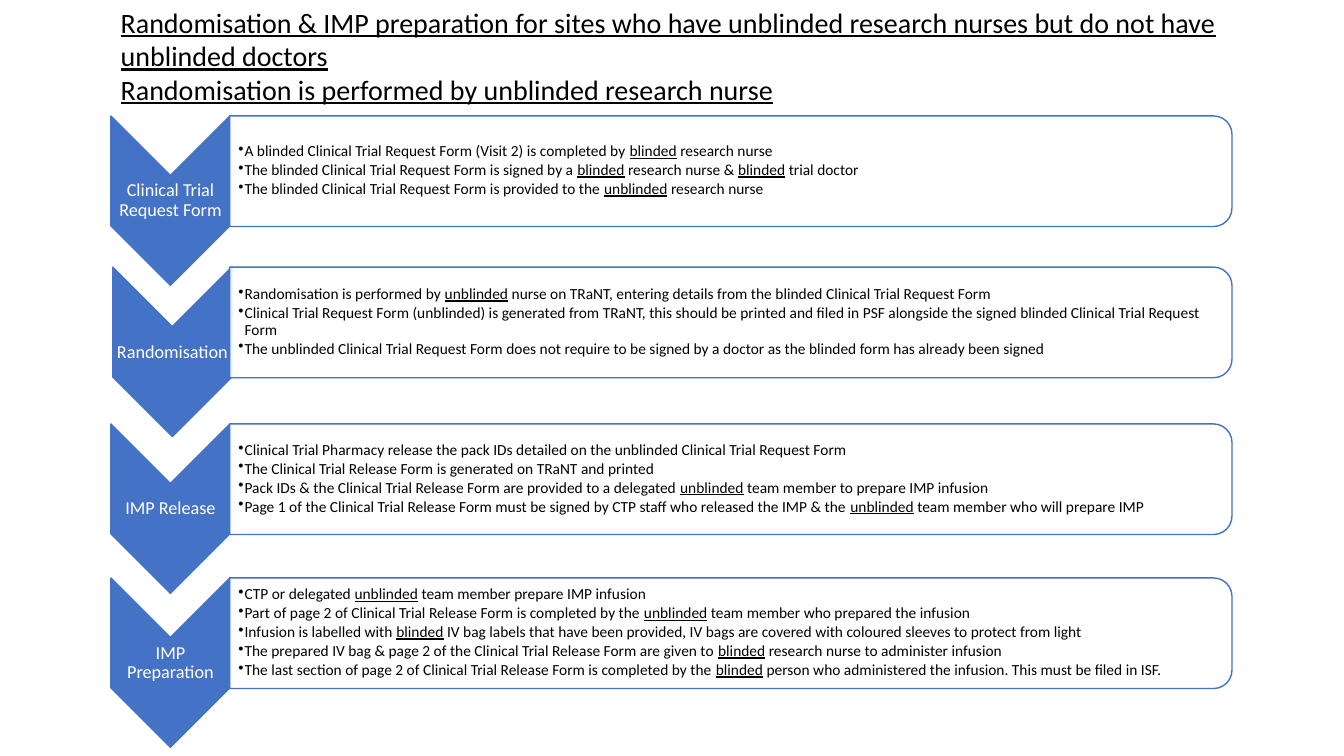
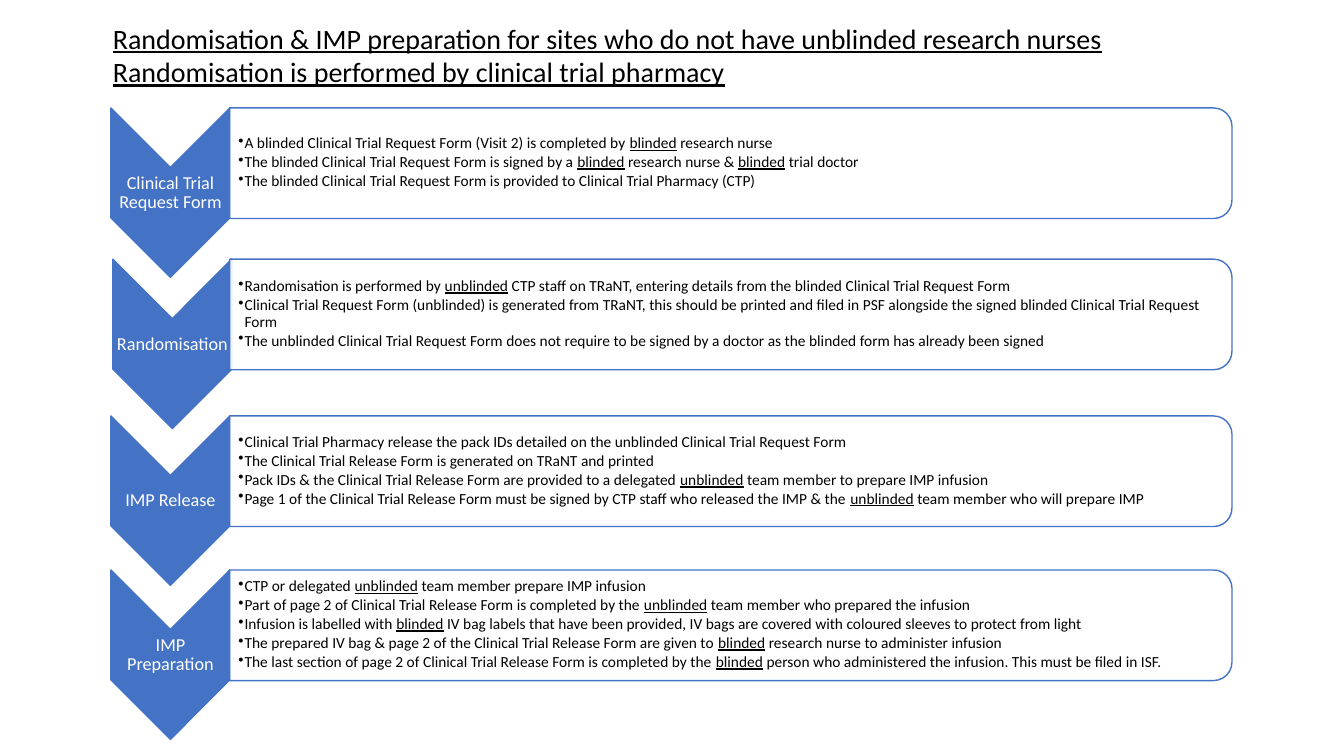
from pptx import Presentation
from pptx.dml.color import RGBColor
from pptx.enum.shapes import MSO_SHAPE
from pptx.enum.text import MSO_ANCHOR, MSO_AUTO_SIZE, PP_ALIGN
from pptx.oxml.xmlchemy import OxmlElement
from pptx.util import Pt

CHEVRON, CARD = MSO_SHAPE.CHEVRON, MSO_SHAPE.ROUND_2_SAME_RECTANGLE
TOP, MIDDLE = MSO_ANCHOR.TOP, MSO_ANCHOR.MIDDLE
LEFT, CENTER = PP_ALIGN.LEFT, PP_ALIGN.CENTER
NO_AUTOFIT = MSO_AUTO_SIZE.NONE

BLUE = RGBColor(0x44, 0x72, 0xC4)
WHITE = RGBColor(0xFF, 0xFF, 0xFF)
BLACK = RGBColor(0x00, 0x00, 0x00)
FONT = "Calibri"

CHEVRON_W, CHEVRON_H = 85, 121
CARD_X, CARD_W, CARD_H = 164, 716, 79

SLIDES = [
    {
        "title": [
            "Randomisation & IMP preparation for sites who have unblinded research nurses but do not have",
            "unblinded doctors",
            "Randomisation is performed by unblinded research nurse",
        ],
        "title_box": (79, 0, 820, 80),
        "top": 82.8,
        "recipient": "the _unblinded_ research nurse",
        "randomiser": "nurse",
    },
    {
        "title": [
            "Randomisation & IMP preparation for sites who do not have unblinded research nurses",
            "Randomisation is performed by clinical trial pharmacy",
        ],
        "title_box": (73.4, 11.5, 740, 55.5),
        "top": 77.1,
        "recipient": "Clinical Trial Pharmacy (CTP)",
        "randomiser": "CTP staff",
    },
]

STEPS = [
    (79.2, 0, "Clinical Trial Request Form", [
        "A blinded Clinical Trial Request Form (Visit 2) is completed by _blinded_ research nurse",
        "The blinded Clinical Trial Request Form is signed by a _blinded_ research nurse & _blinded_ trial doctor",
        "The blinded Clinical Trial Request Form is provided to {recipient}",
    ]),
    (80.6, 108, "Randomisation", [
        "Randomisation is performed by _unblinded_ {randomiser} on TRaNT, entering details from the blinded Clinical Trial Request Form",
        "Clinical Trial Request Form (unblinded) is generated from TRaNT, this should be printed and filed in PSF alongside the signed blinded Clinical Trial Request Form",
        "The unblinded Clinical Trial Request Form does not require to be signed by a doctor as the blinded form has already been signed",
    ]),
    (79.2, 220, "IMP Release", [
        "Clinical Trial Pharmacy release the pack IDs detailed on the unblinded Clinical Trial Request Form",
        "The Clinical Trial Release Form is generated on TRaNT and printed",
        "Pack IDs & the Clinical Trial Release Form are provided to a delegated _unblinded_ team member to prepare IMP infusion",
        "Page 1 of the Clinical Trial Release Form must be signed by CTP staff who released the IMP & the _unblinded_ team member who will prepare IMP",
    ]),
    (79.2, 330, "IMP Preparation", [
        "CTP or delegated _unblinded_ team member prepare IMP infusion",
        "Part of page 2 of Clinical Trial Release Form is completed by the _unblinded_ team member who prepared the infusion",
        "Infusion is labelled with _blinded_ IV bag labels that have been provided, IV bags are covered with coloured sleeves to protect from light",
        "The prepared IV bag & page 2 of the Clinical Trial Release Form are given to _blinded_ research nurse to administer infusion",
        "The last section of page 2 of Clinical Trial Release Form is completed by the _blinded_ person who administered the infusion. This must be filed in ISF.",
    ]),
]


def write(sp, lines, size, color=BLACK, align=LEFT, anchor=MIDDLE, inset=(0.7, 0.7),
          spacing=0.9, after=0, bullet=False, underline=False):
    tf = sp.text_frame
    tf.word_wrap = True
    tf.auto_size = NO_AUTOFIT
    tf.vertical_anchor = anchor
    tf.margin_left, tf.margin_top = Pt(inset[0]), Pt(inset[1])
    tf.margin_right = tf.margin_bottom = Pt(0.7)
    for i, line in enumerate(lines):
        p = tf.add_paragraph() if i else tf.paragraphs[0]
        p.alignment = align
        p.line_spacing = spacing
        p.space_before = Pt(0)
        p.space_after = Pt(after)
        if bullet:
            p.level = 1
            pPr = p._p.get_or_add_pPr()
            pPr.set("marL", str(Pt(4.5)))
            pPr.set("indent", str(-Pt(4.5)))
            bu = OxmlElement("a:buChar")
            bu.set("char", "•")
            pPr.append(bu)
        for j, part in enumerate(line.split("_")):
            r = p.add_run()
            r.text = part
            r.font.name = FONT
            r.font.size = Pt(size)
            r.font.color.rgb = color
            r.font.underline = underline or j % 2 == 1


def add_rotated(s, kind, x, y, w, h, fill):
    sp = s.shapes.add_shape(kind, Pt(x + (w - h) / 2), Pt(y + (h - w) / 2), Pt(h), Pt(w))
    sp.rotation = 90
    sp.shadow.inherit = False
    sp.fill.solid()
    sp.fill.fore_color.rgb = fill
    sp.line.color.rgb = BLUE
    sp.line.width = Pt(1)
    return sp


prs = Presentation()
prs.slide_width, prs.slide_height = Pt(960), Pt(540)

for page in SLIDES:
    s = prs.slides.add_slide(prs.slide_layouts[5])
    title = s.shapes.title
    title.left, title.top, title.width, title.height = map(Pt, page["title_box"])
    write(title, page["title"], 20, anchor=TOP, inset=(7.2, 3.6), spacing=1, underline=True)

    for x, offset, label, bullets in STEPS:
        y = page["top"] + offset
        add_rotated(s, CHEVRON, x, y, CHEVRON_W, CHEVRON_H, BLUE)
        sp = s.shapes.add_textbox(Pt(x), Pt(y + 42.5), Pt(CHEVRON_W), Pt(36.5))
        write(sp, [label], 13, color=WHITE, align=CENTER, after=4.5)

        card = add_rotated(s, CARD, CARD_X, y, CARD_W, CARD_H, WHITE)
        alpha = OxmlElement("a:alpha")
        alpha.set("val", "90000")
        card.fill._xPr.solidFill.srgbClr.append(alpha)
        sp = s.shapes.add_textbox(Pt(CARD_X), Pt(y + 3.6), Pt(712), Pt(71))
        lines = [b.format(recipient=page["recipient"], randomiser=page["randomiser"]) for b in bullets]
        write(sp, lines, 11, inset=(6.2, 0.7), after=1.65, bullet=True)

prs.save("out.pptx")
